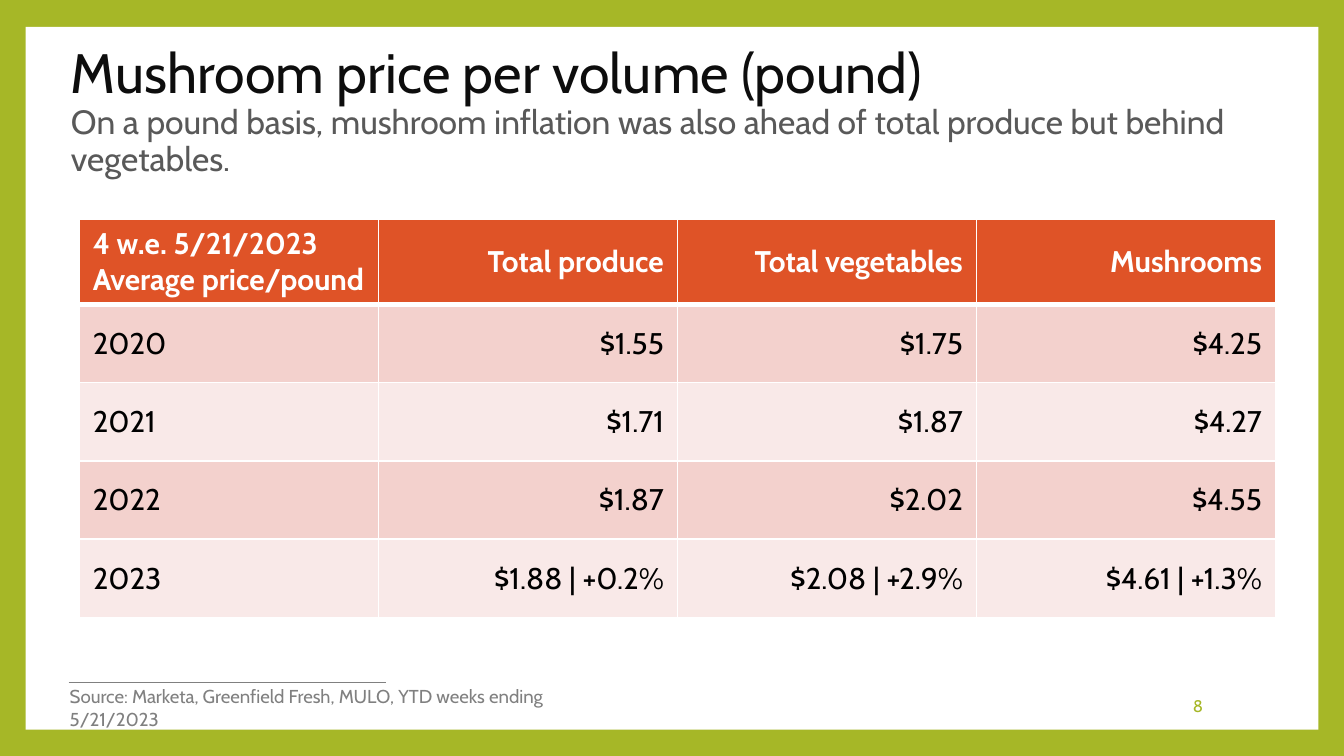
from typing import NamedTuple

from lxml import etree
from pptx import Presentation
from pptx.dml.color import RGBColor
from pptx.enum import shapes, text
from pptx.oxml import ns
from pptx.util import Inches, Pt

FONT = "Cabin"
COLORS = {
    "frame": "A6B727",
    "paper": "FFFFFF",
    "title": "0D0D0D",
    "subtitle": "595959",
    "muted": "808080",
    "header": "DF5327",
    "body": "000000",
    "band_dark": "F3D1CD",
    "band_light": "F9E9E8",
}
LEFT, RIGHT = text.PP_ALIGN.LEFT, text.PP_ALIGN.RIGHT
MIDDLE, TOP = text.MSO_ANCHOR.MIDDLE, text.MSO_ANCHOR.TOP
HEADER_HEIGHT = Inches(0.59)
BODY_HEIGHT = Inches(3.5) // 6


class PriceRow(NamedTuple):
    label: str
    produce: str
    vegetables: str
    mushrooms: str


PRICES = [
    PriceRow("4 w.e. 5/21/2023\nAverage price/pound", "Total produce",
             "Total vegetables", "Mushrooms"),
    PriceRow("2020", "$1.55", "$1.75", "$4.25"),
    PriceRow("2021", "$1.71", "$1.87", "$4.27"),
    PriceRow("2022", "$1.87", "$2.02", "$4.55"),
    PriceRow("2023", "$1.88 | +0.2%", "$2.08 | +2.9%", "$4.61 | +1.3%"),
]


def rgb(name: str) -> RGBColor:
    return RGBColor.from_string(COLORS[name])


def add_run(paragraph, words: str, *, size: float, color: str, bold: bool = False) -> None:
    run = paragraph.add_run()
    run.text = words
    run.font.name = FONT
    run.font.size = Pt(size)
    run.font.bold = bold
    run.font.color.rgb = rgb(color)


def write(frame, words: str, *, align=LEFT, **font) -> None:
    """Fill a text frame, one paragraph per line of words."""
    for index, line in enumerate(words.split("\n")):
        paragraph = frame.add_paragraph() if index else frame.paragraphs[0]
        paragraph.alignment = align
        add_run(paragraph, line, **font)


def add_frame(slide, left: float, top: float, width: float, height: float, anchor):
    box = slide.shapes.add_textbox(Inches(left), Inches(top), Inches(width), Inches(height))
    frame = box.text_frame
    frame.word_wrap = True
    frame.vertical_anchor = anchor
    return frame


def set_borders(cell, **widths: float) -> None:
    """Draw white cell edges; keywords are L, R, T, B with widths in points."""
    properties = cell._tc.get_or_add_tcPr()
    for index, (side, width) in enumerate(widths.items()):
        edge = etree.Element(ns.qn(f"a:ln{side}"), w=str(Pt(width)))
        fill = etree.SubElement(edge, ns.qn("a:solidFill"))
        etree.SubElement(fill, ns.qn("a:srgbClr"), val=COLORS["paper"])
        properties.insert(index, edge)


def add_backdrop(slide) -> None:
    slide.background.fill.solid()
    slide.background.fill.fore_color.rgb = rgb("frame")
    paper = slide.shapes.add_shape(shapes.MSO_SHAPE.RECTANGLE, Inches(0.19), Inches(0.2),
                                   Inches(9.62), Inches(5.23))
    paper.shadow.inherit = False
    paper.fill.solid()
    paper.fill.fore_color.rgb = rgb("paper")
    paper.line.fill.background()

    rule = slide.shapes.add_connector(shapes.MSO_CONNECTOR.STRAIGHT, Inches(0.51),
                                      Inches(5.08), Inches(2.87), Inches(5.08))
    rule.line.color.rgb = rgb("muted")
    rule.line.width = Pt(0.79)
    etree.SubElement(rule._element.spPr, ns.qn("a:effectLst"))


def add_heading(slide) -> None:
    heading = add_frame(slide, 0.43, 0.36, 9.43, 0.95, MIDDLE).paragraphs[0]
    heading.line_spacing = 0.9
    add_run(heading, "Mushroom price per volume (pound)", size=29.7, color="title")
    heading.add_line_break()
    add_run(heading, "On a pound basis, mushroom inflation was also ahead of total "
            "produce but behind vegetables.", size=18, color="subtitle")


def add_price_table(slide, rows: list[PriceRow]) -> None:
    columns = len(PriceRow._fields)
    table = slide.shapes.add_table(len(rows), columns, Inches(0.59), Inches(1.63),
                                   Inches(8.9), Inches(2.96)).table
    for r, row in enumerate(rows):
        is_header = r == 0
        table.rows[r].height = HEADER_HEIGHT if is_header else BODY_HEIGHT
        fill = "header" if is_header else ("band_dark" if r % 2 else "band_light")
        for c, words in enumerate(row):
            cell = table.cell(r, c)
            cell.fill.solid()
            cell.fill.fore_color.rgb = rgb(fill)
            cell.vertical_anchor = MIDDLE
            write(cell.text_frame, words, align=RIGHT if c else LEFT, size=16,
                  color="paper" if is_header else "body", bold=is_header)
            set_borders(cell, L=1, R=1, T=3 if r == 1 else 1, B=3 if is_header else 1)


def main() -> None:
    deck = Presentation()
    deck.slide_width = Inches(10)
    deck.slide_height = deck.slide_width * 9 // 16
    slide = deck.slides.add_slide(deck.slide_layouts[6])
    add_backdrop(slide)
    add_heading(slide)
    write(add_frame(slide, 7.65, 5.1, 1.4, 0.3, MIDDLE), "8",
          align=RIGHT, size=9, color="frame")
    add_price_table(slide, PRICES)
    write(add_frame(slide, 0.42, 5.05, 4.31, 0.27, TOP),
          "Source: Marketa, Greenfield Fresh, MULO, YTD weeks ending 5/21/2023",
          size=10, color="muted")
    deck.save("out.pptx")


if __name__ == "__main__":
    main()
